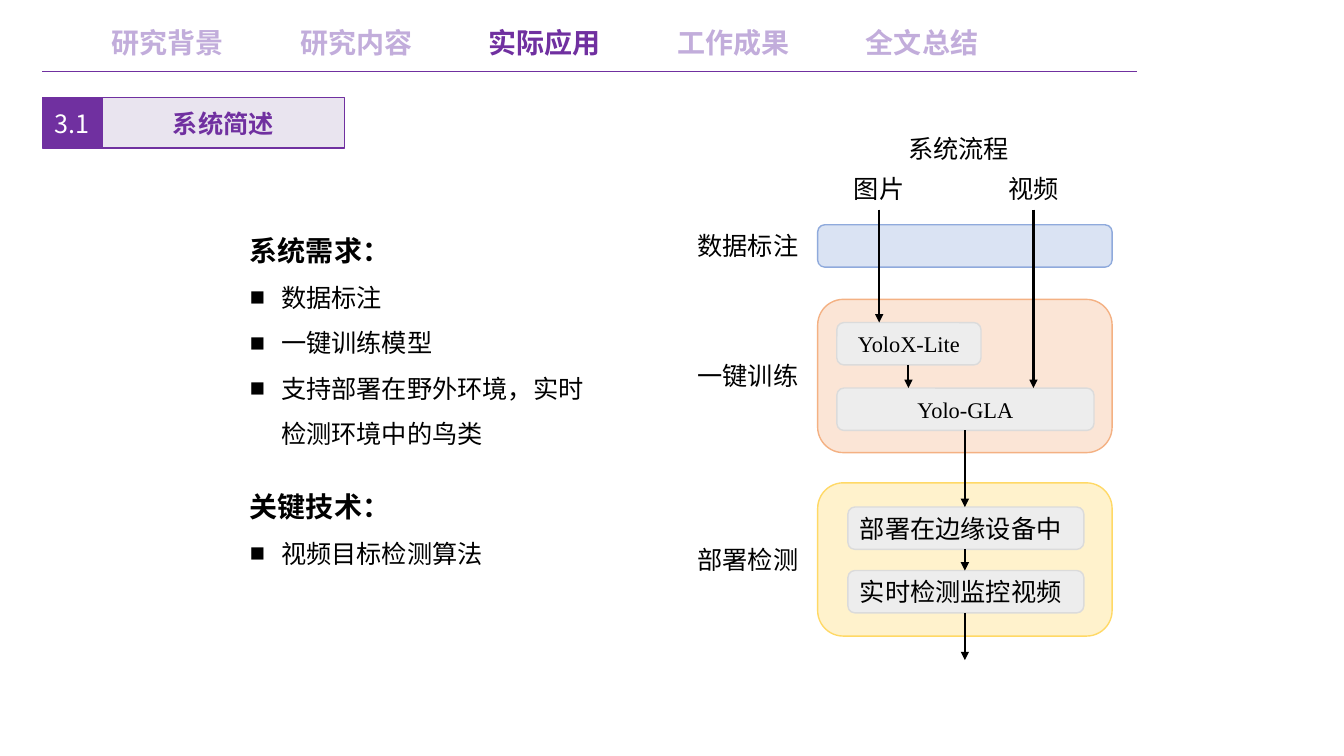
from lxml import etree
from pptx import Presentation
from pptx import util as u
from pptx.dml.color import RGBColor
from pptx.enum import shapes, text
from pptx.oxml.ns import qn

SANS, SERIF = "Noto Sans CJK SC", "Times New Roman"
PURPLE, PALE, BLACK, WHITE = "7030A0", "C2ADDB", "000000", "FFFFFF"
STEP_FILL, STEP_LINE = "EDEDED", "DBDBDB"
LINE_H = 0.4
STEP_H = 0.42


def color(value):
    return RGBColor.from_string(value)


def add_run(p, words, size=18, c=BLACK, bold=False, face=SANS):
    r = p.add_run()
    r.text = words
    for name, value in dict(size=u.Pt(size), bold=bold, name=face).items():
        setattr(r.font, name, value)
    r.font.color.rgb = color(c)
    etree.SubElement(r.font._element, qn("a:ea"), typeface=face)


def paint(sp, fill, line):
    sp.fill.solid()
    sp.fill.fore_color.rgb = color(fill)
    sp.line.color.rgb = color(line)
    sp.line.width = u.Pt(1)


def fill_text(sp, words, align=text.PP_ALIGN.CENTER, **font):
    tf = sp.text_frame
    tf.word_wrap = True
    tf.vertical_anchor = text.MSO_ANCHOR.MIDDLE
    tf.paragraphs[0].alignment = align
    add_run(tf.paragraphs[0], words, **font)


def add_box(s, kind, x, y, w, h, fill, line):
    sp = s.shapes.add_shape(kind, *map(u.Inches, (x, y, w, h)))
    sp.shadow.inherit = False
    paint(sp, fill, line)
    return sp


def add_label(s, x, y, w, h, words, **font):
    """One line of text that does not wrap."""
    tf = s.shapes.add_textbox(*map(u.Inches, (x, y, w, h))).text_frame
    tf.word_wrap = False
    tf.auto_size = text.MSO_AUTO_SIZE.SHAPE_TO_FIT_TEXT
    add_run(tf.paragraphs[0], words, **font)


def add_line(s, x1, y1, x2, y2, c=BLACK, width=1.5, arrow=True):
    cn = s.shapes.add_connector(shapes.MSO_CONNECTOR.STRAIGHT, *map(u.Inches, (x1, y1, x2, y2)))
    cn.line.color.rgb = color(c)
    cn.line.width = u.Pt(width)
    if arrow:
        etree.SubElement(cn.line._get_or_add_ln(), qn("a:tailEnd"), type="triangle")
    etree.SubElement(cn._element.spPr, qn("a:effectLst"))


def add_navigation(s, x, y, w, current):
    add_line(s, x, y + 0.51, x + w, y + 0.51, PURPLE, 1, arrow=False)
    for i, name in enumerate(["研究背景", "研究内容", "实际应用", "工作成果", "全文总结"]):
        add_label(s, x + 0.59 + 1.87 * i, y, 1.32, 0.44, name, size=20, bold=True,
                  c=PURPLE if name == current else PALE)


def add_heading(s, x, y, w, h, number, name):
    number_w = 0.59
    sp = add_box(s, shapes.MSO_SHAPE.RECTANGLE, x, y, number_w, h, PURPLE, PURPLE)
    fill_text(sp, number, c=WHITE)
    title = s.shapes.title
    place = dict(left=x + number_w, top=y, width=w - number_w, height=h)
    for side, value in place.items():
        setattr(title, side, u.Inches(value))
    paint(title, "E9E4EF", PURPLE)
    fill_text(title, name, c=PURPLE, bold=True)
    title.text_frame.auto_size = text.MSO_AUTO_SIZE.NONE


def add_list(s, x, y, w, h, heading, items):
    tf = s.shapes.add_textbox(*map(u.Inches, (x, y, w, h))).text_frame
    tf.word_wrap = True
    tf.auto_size = text.MSO_AUTO_SIZE.SHAPE_TO_FIT_TEXT
    p = tf.paragraphs[0]
    p.line_spacing = 1.5
    add_run(p, heading, size=20, bold=True)
    for item in items:
        p = tf.add_paragraph()
        p.line_spacing = 1.5
        pPr = p._p.get_or_add_pPr()
        indent = u.Inches(0.31)
        pPr.set("marL", str(indent))
        pPr.set("indent", str(-indent))
        etree.SubElement(pPr, qn("a:buFont"), typeface=SERIF)
        etree.SubElement(pPr, qn("a:buChar"), char="■")
        add_run(p, item)


def add_stage(s, x, y, w, h, name, fill, line):
    """A coloured panel with its name to the left, level with its middle."""
    add_box(s, shapes.MSO_SHAPE.ROUNDED_RECTANGLE, x, y, w, h, fill, line)
    add_label(s, x - 1.29, y + (h - LINE_H) / 2, 1.21, LINE_H, name)


def add_step(s, x, y, w, words, **font):
    sp = add_box(s, shapes.MSO_SHAPE.ROUNDED_RECTANGLE, x, y, w, STEP_H, STEP_FILL, STEP_LINE)
    fill_text(sp, words, **font)


def add_flow(s, x, y, w):
    """The system flow; x and w are those of the stage panels."""
    middle, image_x, video_x = x + w / 2, x + 0.61, x + 2.14
    input_y, label_y, train_y, deploy_y = y + 0.4, y + 0.96, y + 1.7, y + 3.52
    panel_h = 1.52
    add_label(s, x + 0.8, y, 1.21, LINE_H, "系统流程")
    for center, name in [(image_x, "图片"), (video_x, "视频")]:
        add_label(s, center - 0.35, input_y, 0.7, LINE_H, name)

    add_stage(s, x, label_y, w, STEP_H, "数据标注", "DAE3F3", "8FAADC")
    add_stage(s, x, train_y, w, panel_h, "一键训练", "FBE5D6", "F4B183")
    add_stage(s, x, deploy_y, w, panel_h, "部署检测", "FFF2CC", "FFD966")

    lite_y, gla_y = train_y + 0.23, train_y + 0.88
    edge_y, watch_y = deploy_y + 0.24, deploy_y + 0.87
    add_step(s, x + 0.19, lite_y, 1.43, "YoloX-Lite", size=16, face=SERIF)
    add_step(s, x + 0.19, gla_y, 2.55, "Yolo-GLA", size=16, face=SERIF)
    for top, words in [(edge_y, "部署在边缘设备中"), (watch_y, "实时检测监控视频")]:
        add_step(s, x + 0.3, top, 2.34, words, align=text.PP_ALIGN.LEFT)

    arrows = [
        (image_x, input_y + 0.41, lite_y),
        (video_x, input_y + 0.41, gla_y),
        (x + 0.9, lite_y + STEP_H, gla_y),
        (middle, gla_y + STEP_H, edge_y),
        (middle, edge_y + STEP_H, watch_y),
        (middle, watch_y + STEP_H, watch_y + 0.89),
    ]
    for center, start, end in arrows:
        add_line(s, center, start, center, end)


def main():
    prs = Presentation()
    prs.slide_width, prs.slide_height = u.Inches(13.33), u.Inches(7.5)
    s = prs.slides.add_slide(prs.slide_layouts[5])
    add_navigation(s, 0.42, 0.2, 10.86, "实际应用")
    add_heading(s, 0.42, 0.97, 3, 0.5, "3.1", "系统简述")
    add_list(s, 2.38, 2.1, 3.75, 2.37, "系统需求：",
             ["数据标注", "一键训练模型", "支持部署在野外环境，实时检测环境中的鸟类"])
    add_list(s, 2.38, 4.64, 3.75, 1.01, "关键技术：", ["视频目标检测算法"])
    add_flow(s, 8.11, 1.27, 2.92)
    prs.save("out.pptx")


if __name__ == "__main__":
    main()
